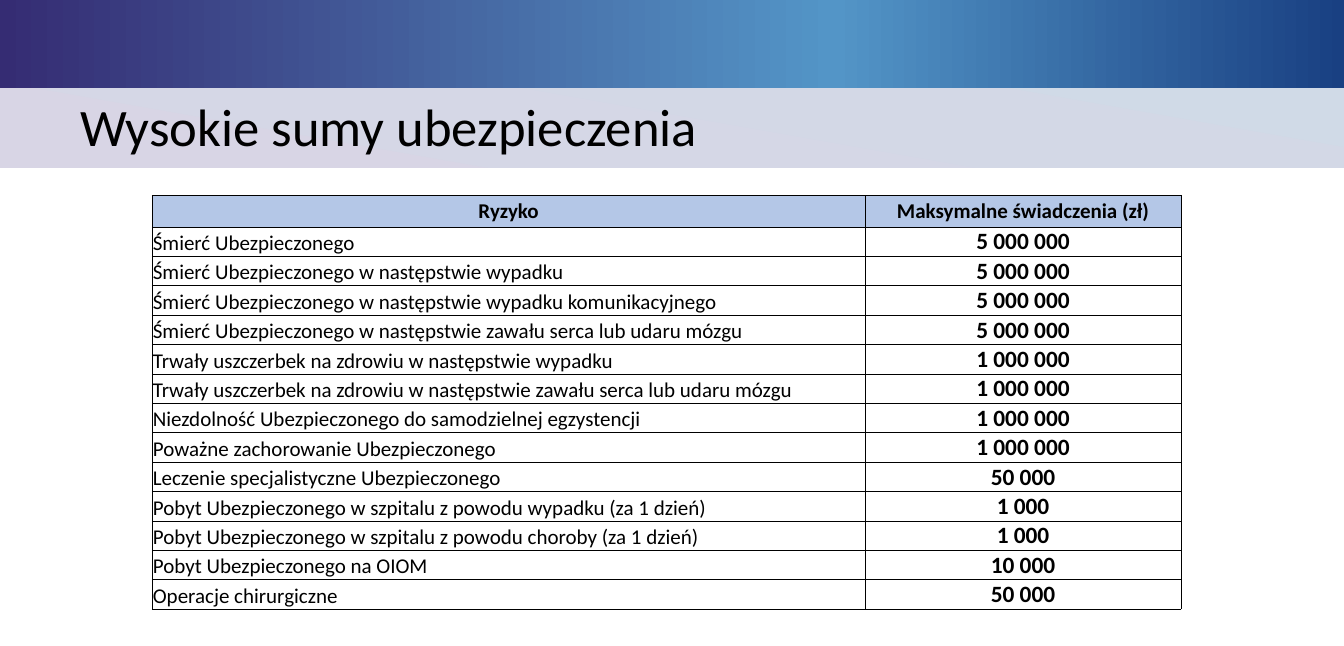
from dataclasses import dataclass
from typing import NamedTuple

from lxml.etree import SubElement
from pptx import Presentation
from pptx.dml.color import RGBColor
from pptx.enum.shapes import MSO_SHAPE
from pptx.enum.text import MSO_ANCHOR as Anchor, PP_ALIGN as Align
from pptx.oxml.ns import qn
from pptx.util import Inches, Pt


@dataclass(frozen=True)
class Theme:
    font: str = "Calibri"
    text: str = "000000"
    header_fill: str = "B4C7E7"
    border: str = "000000"
    border_pt: float = 0.5
    title_pt: float = 45.1
    label_pt: float = 18
    amount_pt: float = 20


class Band(NamedTuple):
    top: float
    height: float
    angle: int
    stops: tuple[tuple[int, str], ...]


class Risk(NamedTuple):
    name: str
    amount: str


THEME = Theme()
SLIDE_W, SLIDE_H = 16, 7.69

BANDS = (
    Band(0.73, 1.27, 100, ((0, "D0DAE7"), (100, "D8D5E5"))),
    Band(-0.04, 1.09, 0, ((0, "352C73"), (62, "5395C7"), (100, "194082"))),
)

HEADER = Risk("Ryzyko", "Maksymalne świadczenia (zł)")
RISKS = (
    Risk("Śmierć Ubezpieczonego", "5 000 000"),
    Risk("Śmierć Ubezpieczonego w następstwie wypadku", "5 000 000"),
    Risk("Śmierć Ubezpieczonego w następstwie wypadku komunikacyjnego", "5 000 000"),
    Risk("Śmierć Ubezpieczonego w następstwie zawału serca lub udaru mózgu", "5 000 000"),
    Risk("Trwały uszczerbek na zdrowiu w następstwie wypadku", "1 000 000"),
    Risk("Trwały uszczerbek na zdrowiu w następstwie zawału serca lub udaru mózgu", "1 000 000"),
    Risk("Niezdolność Ubezpieczonego do samodzielnej egzystencji", "1 000 000"),
    Risk("Poważne zachorowanie Ubezpieczonego", "1 000 000"),
    Risk("Leczenie specjalistyczne Ubezpieczonego", "50 000"),
    Risk("Pobyt Ubezpieczonego w szpitalu z powodu wypadku (za 1 dzień)", "1 000"),
    Risk("Pobyt Ubezpieczonego w szpitalu z powodu choroby (za 1 dzień)", "1 000"),
    Risk("Pobyt Ubezpieczonego na OIOM", "10 000"),
    Risk("Operacje chirurgiczne", "50 000"),
)
TABLE_LEFT, TABLE_TOP = 1.81, 2.33
COLUMN_WIDTHS = (8.49, 3.76)
HEADER_H, ROW_H = 0.37, 0.35


def write(tf, text: str, *, size: float, bold: bool = False,
          align: Align = Align.LEFT, spacing: float | None = None) -> None:
    p = tf.paragraphs[0]
    p.alignment = align
    p.line_spacing = spacing
    r = p.add_run()
    r.text = text
    r.font.name = THEME.font
    r.font.size = Pt(size)
    r.font.bold = bold
    r.font.color.rgb = RGBColor.from_string(THEME.text)


def add_band(s, band: Band) -> None:
    sp = s.shapes.add_shape(MSO_SHAPE.RECTANGLE, 0, Inches(band.top),
                            Inches(SLIDE_W), Inches(band.height))
    sp.shadow.inherit = False
    sp.line.fill.background()
    sp.fill.gradient()
    grad = sp.element.spPr.find(qn("a:gradFill"))
    for child in list(grad):
        grad.remove(child)
    stops = SubElement(grad, qn("a:gsLst"))
    for position, color in band.stops:
        stop = SubElement(stops, qn("a:gs"), pos=str(position * 1000))
        SubElement(stop, qn("a:srgbClr"), val=color)
    SubElement(grad, qn("a:lin"), ang=str(band.angle * 60000), scaled="0")


def add_title(s, text: str) -> None:
    sp = s.shapes.add_textbox(Inches(0.86), Inches(0.58), Inches(14.14), Inches(1.93))
    tf = sp.text_frame
    tf.word_wrap = True
    tf.vertical_anchor = Anchor.MIDDLE
    write(tf, text, size=THEME.title_pt, spacing=0.9)


def set_borders(cell) -> None:
    props = cell._tc.get_or_add_tcPr()
    for side in ("lnL", "lnR", "lnT", "lnB"):
        line = SubElement(props, qn(f"a:{side}"), w=str(Pt(THEME.border_pt)))
        fill = SubElement(line, qn("a:solidFill"))
        SubElement(fill, qn("a:srgbClr"), val=THEME.border)


def format_cell(cell, anchor: Anchor, fill: str | None = None) -> None:
    cell.margin_left = cell.margin_right = cell.margin_top = Inches(0.01)
    cell.margin_bottom = 0
    cell.vertical_anchor = anchor
    set_borders(cell)
    if fill:
        cell.fill.solid()
        cell.fill.fore_color.rgb = RGBColor.from_string(fill)
    else:
        cell.fill.background()


def add_risk_table(s) -> None:
    heights = [HEADER_H] + [ROW_H] * len(RISKS)
    frame = s.shapes.add_table(len(heights), len(COLUMN_WIDTHS),
                               Inches(TABLE_LEFT), Inches(TABLE_TOP),
                               Inches(sum(COLUMN_WIDTHS)), Inches(sum(heights)))
    table = frame.table
    table.first_row = table.horz_banding = False
    for column, width in zip(table.columns, COLUMN_WIDTHS):
        column.width = Inches(width)
    for row, height in zip(table.rows, heights):
        row.height = Inches(height)

    for i, text in enumerate(HEADER):
        cell = table.cell(0, i)
        format_cell(cell, Anchor.MIDDLE, THEME.header_fill)
        write(cell.text_frame, text, size=THEME.label_pt, bold=True, align=Align.CENTER)
    for i, risk in enumerate(RISKS, start=1):
        name, amount = table.cell(i, 0), table.cell(i, 1)
        for cell in (name, amount):
            format_cell(cell, Anchor.BOTTOM)
        write(name.text_frame, risk.name, size=THEME.label_pt)
        write(amount.text_frame, risk.amount, size=THEME.amount_pt, bold=True,
              align=Align.CENTER)


def main() -> None:
    prs = Presentation()
    prs.slide_width, prs.slide_height = Inches(SLIDE_W), Inches(SLIDE_H)
    s = prs.slides.add_slide(prs.slide_layouts[6])
    for band in BANDS:
        add_band(s, band)
    add_title(s, "Wysokie sumy ubezpieczenia")
    add_risk_table(s)
    prs.save("out.pptx")


if __name__ == "__main__":
    main()
